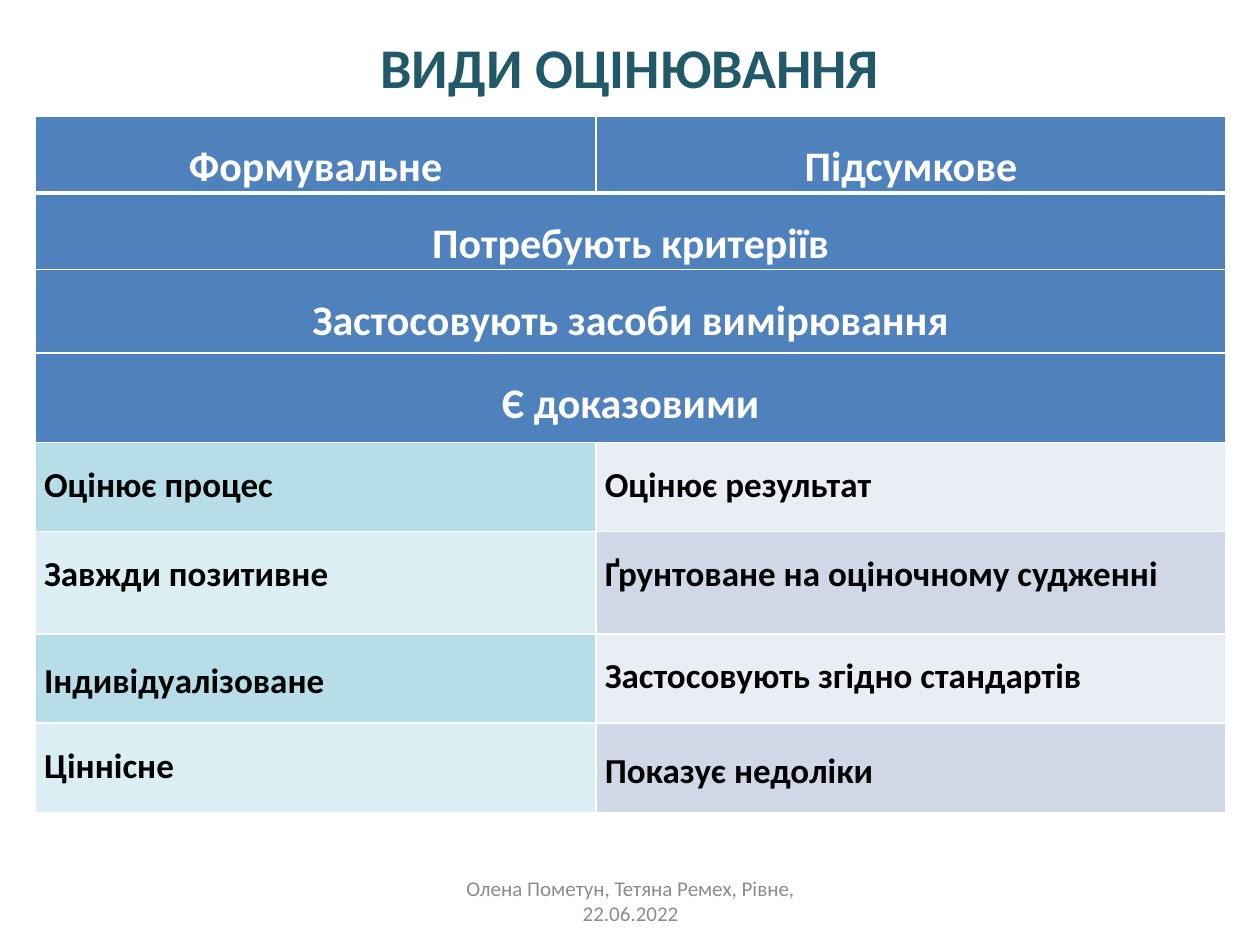
from dataclasses import dataclass

from lxml import etree
from pptx import Presentation
from pptx.dml.color import RGBColor
from pptx.enum.text import MSO_ANCHOR, PP_ALIGN
from pptx.oxml.ns import qn
from pptx.util import Inches, Pt

CENTER, JUSTIFY = PP_ALIGN.CENTER, PP_ALIGN.JUSTIFY
TOP, MIDDLE = MSO_ANCHOR.TOP, MSO_ANCHOR.MIDDLE
TITLE_ONLY = 5


@dataclass(frozen=True)
class Theme:
    font: str = "Calibri"
    title: str = "215968"
    footer: str = "8C8C8C"
    heading: str = "FFFFFF"
    body: str = "000000"
    border: str = "FFFFFF"
    heading_fill: str = "4F81BD"
    # Row bands, one pair (left, right) per alternating row
    bands: tuple = (("B7DEE8", "E9EDF4"), ("DBEEF4", "D0D8E8"))
    title_size: int = 32
    heading_size: int = 24
    body_size: int = 20
    footer_size: int = 12


HEADINGS = ("Формувальне", "Підсумкове")
SHARED_TRAITS = (
    "Потребують критеріїв",
    "Застосовують засоби вимірювання",
    "Є доказовими",
)
CONTRASTS = (
    ("Оцінює процес", "Оцінює результат"),
    ("Завжди позитивне", "Ґрунтоване на оціночному судженні"),
    ("Індивідуалізоване", "Застосовують згідно стандартів"),
    ("Ціннісне", "Показує недоліки"),
)
CENTERED_TRAITS = ("Індивідуалізоване", "Показує недоліки")
COLUMN_WIDTHS = (4.45, 5)
ROW_HEIGHTS = (0.58, 0.58, 0.66, 0.71, 0.71, 0.81, 0.71, 0.71)


class SlideBuilder:
    def __init__(self, slide, theme):
        self.slide = slide
        self.theme = theme

    def set_text(self, frame, text, size, color, bold=True, align=CENTER, spacing=None):
        frame.text = text
        frame.word_wrap = True
        paragraph = frame.paragraphs[0]
        paragraph.alignment = align
        paragraph.line_spacing = spacing
        font = paragraph.runs[0].font
        font.name, font.size, font.bold = self.theme.font, Pt(size), bold
        font.color.rgb = RGBColor.from_string(color)

    def title(self, text, left, top, width, height):
        title = self.slide.shapes.title
        title.left, title.top = Inches(left), Inches(top)
        title.width, title.height = Inches(width), Inches(height)
        title.text_frame.vertical_anchor = MIDDLE
        self.set_text(title.text_frame, text, self.theme.title_size, self.theme.title)

    def footer(self, text, left, top, width, height):
        footer = self.slide.shapes.add_textbox(
            Inches(left), Inches(top), Inches(width), Inches(height))
        footer.text_frame.vertical_anchor = MIDDLE
        self.set_text(footer.text_frame, text, self.theme.footer_size,
                      self.theme.footer, bold=False)

    def table(self, left, top, widths, heights):
        table = self.slide.shapes.add_table(
            len(heights), len(widths), Inches(left), Inches(top),
            Inches(sum(widths)), Inches(sum(heights))).table
        for column, width in zip(table.columns, widths):
            column.width = Inches(width)
        for row, height in zip(table.rows, heights):
            row.height = Inches(height)
        return table

    def style_cell(self, cell, fill, bottom=1, top=1):
        """Set margins, border widths in points and fill; borders precede the fill."""
        cell.margin_left = cell.margin_right = Inches(0.07)
        cell.margin_top = cell.margin_bottom = 0
        properties = cell._tc.get_or_add_tcPr()
        for side, width in (("L", 1), ("R", 1), ("T", top), ("B", bottom)):
            line = etree.SubElement(properties, qn(f"a:ln{side}"), w=str(Pt(width)))
            solid = etree.SubElement(line, qn("a:solidFill"))
            etree.SubElement(solid, qn("a:srgbClr"), val=self.theme.border)
        cell.fill.solid()
        cell.fill.fore_color.rgb = RGBColor.from_string(fill)

    def heading_cell(self, cell, text):
        self.set_text(cell.text_frame, text, self.theme.heading_size,
                      self.theme.heading, spacing=1.5)

    def trait_cell(self, cell, text):
        centered = text in CENTERED_TRAITS
        self.set_text(cell.text_frame, text, self.theme.body_size, self.theme.body,
                      align=JUSTIFY, spacing=1.15 if centered else 1.5)
        cell.vertical_anchor = MIDDLE if centered else TOP

    def comparison(self, left, top):
        table = self.table(left, top, COLUMN_WIDTHS, ROW_HEIGHTS)
        for column, heading in enumerate(HEADINGS):
            cell = table.cell(0, column)
            self.style_cell(cell, self.theme.heading_fill, bottom=3)
            self.heading_cell(cell, heading)

        for row, trait in enumerate(SHARED_TRAITS, start=1):
            for column in range(len(COLUMN_WIDTHS)):
                self.style_cell(table.cell(row, column), self.theme.heading_fill,
                                top=3 if row == 1 else 1)
            table.cell(row, 0).merge(table.cell(row, 1))
            self.heading_cell(table.cell(row, 0), trait)

        first_contrast = 1 + len(SHARED_TRAITS)
        for index, traits in enumerate(CONTRASTS):
            fills = self.theme.bands[index % len(self.theme.bands)]
            for column, (trait, fill) in enumerate(zip(traits, fills)):
                cell = table.cell(first_contrast + index, column)
                self.style_cell(cell, fill)
                self.trait_cell(cell, trait)


def main():
    deck = Presentation()
    deck.slide_width, deck.slide_height = Inches(10), Inches(7.5)
    slide = deck.slides.add_slide(deck.slide_layouts[TITLE_ONLY])
    builder = SlideBuilder(slide, Theme())
    builder.title("ВИДИ ОЦІНЮВАННЯ", 0.5, 0.21, 9, 0.63)
    builder.comparison(0.28, 0.92)
    builder.footer("Олена Пометун, Тетяна Ремех, Рівне, 22.06.2022",
                   3.42, 6.95, 3.17, 0.4)
    deck.save("out.pptx")


if __name__ == "__main__":
    main()
